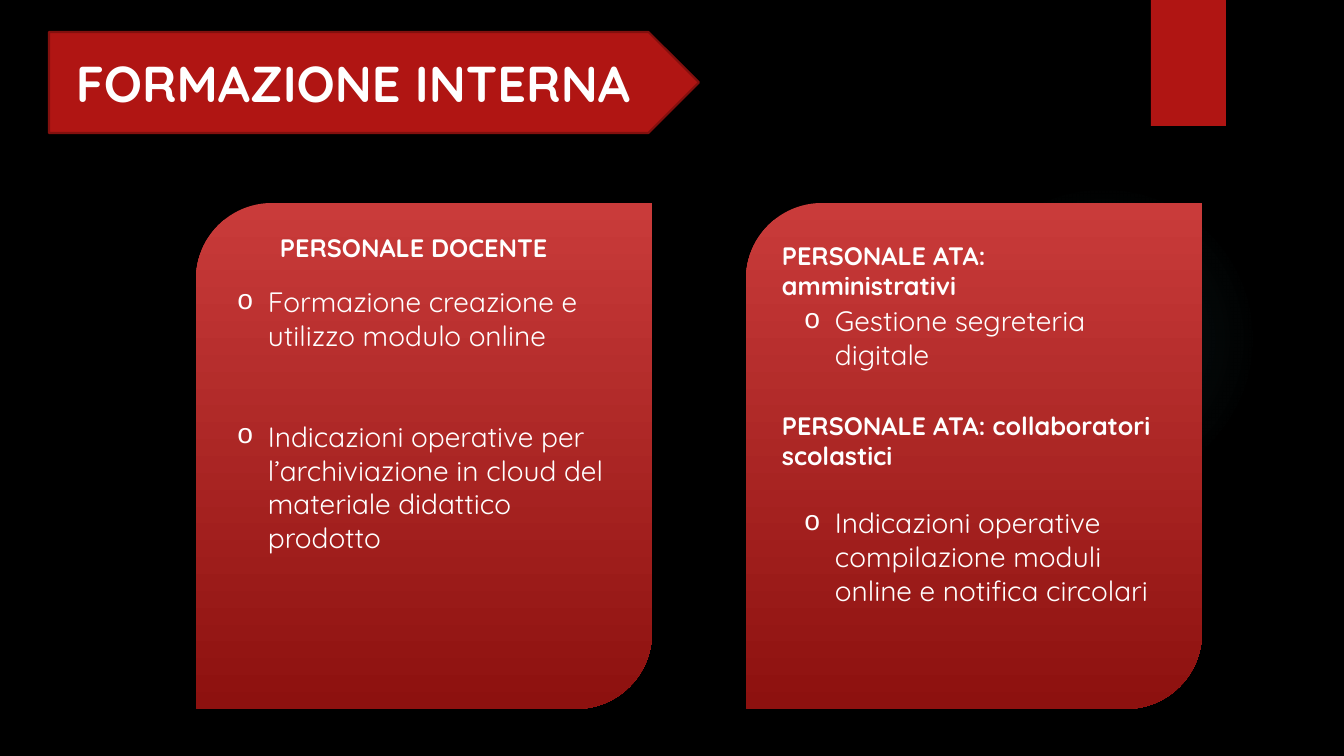
from lxml.etree import SubElement
from pptx import Presentation
from pptx.dml.color import RGBColor
from pptx.enum.shapes import MSO_SHAPE as Shape
from pptx.enum.text import MSO_AUTO_SIZE as AutoSize
from pptx.oxml.ns import qn
from pptx.util import Emu, Pt

SLIDE = (1344, 756)
EMU_PER_PX = 12192000 / SLIDE[0]
BLACK, WHITE, RED, DARK_RED, TEAL = "000000", "FFFFFF", "B01513", "82100E", "50B9C1"
INDENT = 31

TITLE_FORMAT = {"name": "Quicksand", "size": Pt(36), "bold": True}
HEADING_FORMAT = {"name": "Quicksand", "size": Pt(18), "bold": True}
ITEM_FORMAT = {"name": "Quicksand", "size": Pt(20), "bold": False}

GLOW = (949, 184, 310, 310)
GLOW_STOPS = [(0, TEAL, 7), (36, TEAL, 6), (69, TEAL, 0)]
RIBBON = (1151, 0, 75, 126)
BANNER = (49, 32, 650, 101)
PANEL_LEFTS = (196, 746)
PANEL_TOP, PANEL_WIDTH, PANEL_HEIGHT = 203, 456, 506
PANEL_STOPS = [(0, "C93B3A", 100), (100, "8D110F", 100)]

TITLE = ("FORMAZIONE INTERNA", (66, 47, 607, 72))
HEADINGS = [
    ("PERSONALE DOCENTE", (270, 227, 335, 40)),
    ("PERSONALE ATA: amministrativi", (772, 235, 400, 71)),
    ("PERSONALE ATA: collaboratori scolastici", (772, 405, 400, 71)),
]
ITEM_LISTS = [
    (["Formazione creazione e utilizzo modulo online",
      "Indicazioni operative per l’archiviazione in cloud del materiale didattico prodotto"],
     (227, 280, 393, 281)),
    (["Gestione segreteria digitale"], (794, 299, 393, 78)),
    (["Indicazioni operative compilazione moduli online e notifica circolari"],
     (794, 501, 393, 146)),
]


def px(length):
    return Emu(round(length * EMU_PER_PX))


def color(hex_text):
    return RGBColor.from_string(hex_text)


def add_block(slide, kind, box, fill=None, line=None):
    block = slide.shapes.add_shape(kind, *map(px, box))
    block.shadow.inherit = False
    if fill:
        block.fill.solid()
        block.fill.fore_color.rgb = color(fill)
    if line:
        block.line.color.rgb = color(line)
        block.line.width = Pt(1.5)
    else:
        block.line.fill.background()
    return block


def set_gradient(block, stops, radial=False):
    """Fill with (position %, colour, opacity %) stops, downward or from the centre."""
    block.fill.gradient()
    gradient = block._element.spPr.find(qn("a:gradFill"))
    for child in list(gradient):
        gradient.remove(child)
    stop_list = SubElement(gradient, qn("a:gsLst"))
    for position, hex_text, opacity in stops:
        stop = SubElement(stop_list, qn("a:gs"), pos=str(position * 1000))
        tint = SubElement(stop, qn("a:srgbClr"), val=hex_text)
        if opacity < 100:
            SubElement(tint, qn("a:alpha"), val=str(opacity * 1000))
    if radial:
        route = SubElement(gradient, qn("a:path"), path="circle")
        SubElement(route, qn("a:fillToRect"), l="50000", t="50000", r="50000", b="50000")
    else:
        SubElement(gradient, qn("a:lin"), ang="5400000", scaled="0")


def add_bullet(paragraph):
    properties = paragraph._p.get_or_add_pPr()
    properties.set("marL", str(px(INDENT)))
    properties.set("indent", str(-px(INDENT)))
    SubElement(properties, qn("a:buFont"), typeface="Courier New")
    SubElement(properties, qn("a:buChar"), char="o")


def add_text(slide, texts, box, font_format, bulleted=False):
    frame = slide.shapes.add_textbox(*map(px, box)).text_frame
    frame.word_wrap = True
    frame.auto_size = AutoSize.SHAPE_TO_FIT_TEXT
    for index, text in enumerate(texts):
        paragraph = frame.add_paragraph() if index else frame.paragraphs[0]
        if index:
            paragraph.space_before = Pt(48)
        if bulleted:
            add_bullet(paragraph)
        run = paragraph.add_run()
        run.text = text
        for key, value in font_format.items():
            setattr(run.font, key, value)
        run.font.color.rgb = color(WHITE)


def main():
    deck = Presentation()
    deck.slide_width, deck.slide_height = map(px, SLIDE)
    slide = deck.slides.add_slide(deck.slide_layouts[6])
    slide.background.fill.solid()
    slide.background.fill.fore_color.rgb = color(BLACK)

    set_gradient(add_block(slide, Shape.OVAL, GLOW), GLOW_STOPS, radial=True)
    add_block(slide, Shape.RECTANGLE, RIBBON, RED)
    add_block(slide, Shape.PENTAGON, BANNER, RED, DARK_RED)
    for left in PANEL_LEFTS:
        panel_box = (left, PANEL_TOP, PANEL_WIDTH, PANEL_HEIGHT)
        panel = add_block(slide, Shape.ROUND_2_DIAG_RECTANGLE, panel_box)
        set_gradient(panel, PANEL_STOPS)

    title, title_box = TITLE
    add_text(slide, [title], title_box, TITLE_FORMAT)
    for heading, box in HEADINGS:
        add_text(slide, [heading], box, HEADING_FORMAT)
    for items, box in ITEM_LISTS:
        add_text(slide, items, box, ITEM_FORMAT, bulleted=True)
    deck.save("out.pptx")


if __name__ == "__main__":
    main()
